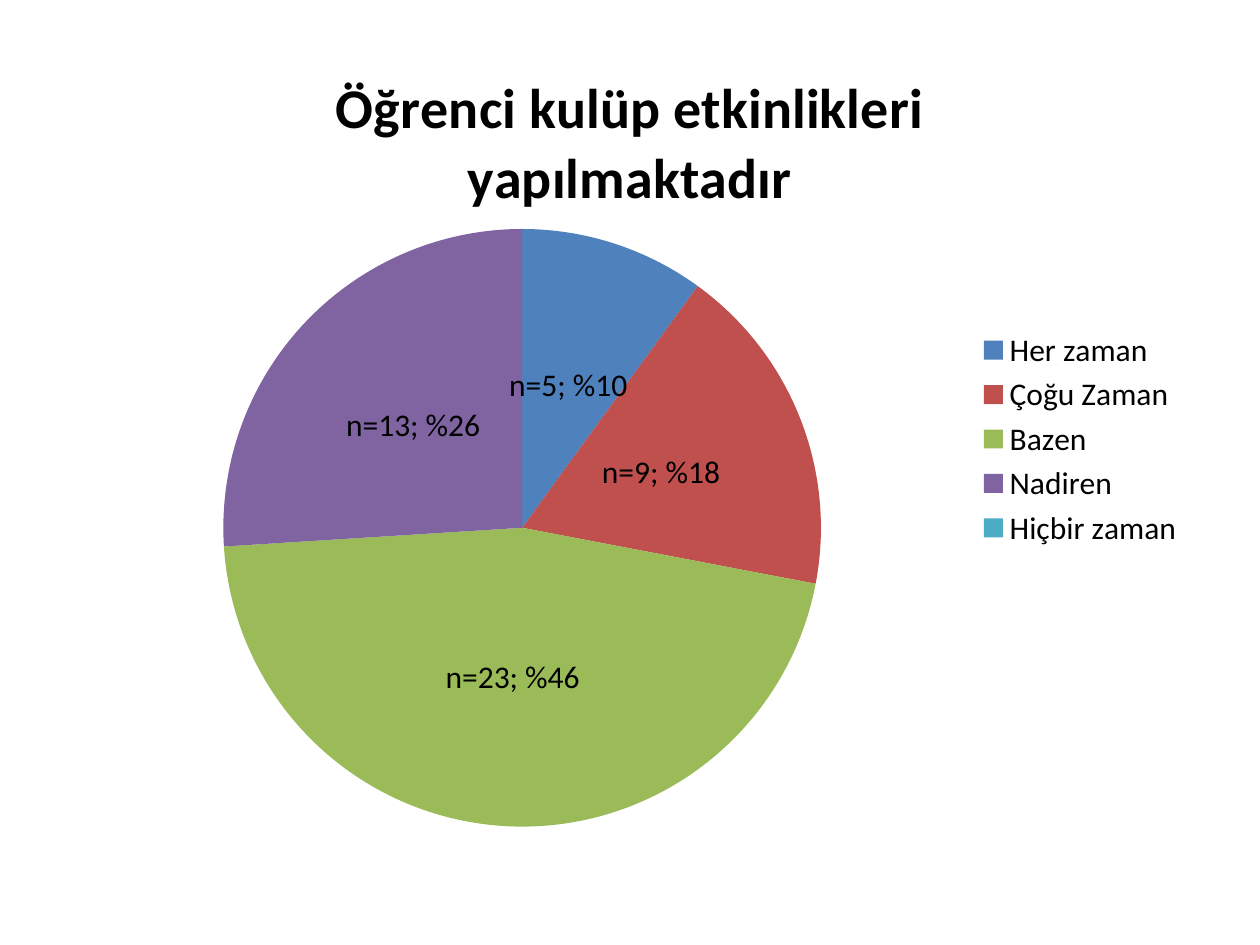
from lxml import etree
from pptx import Presentation
from pptx.chart.data import CategoryChartData
from pptx.dml.color import RGBColor
from pptx.enum.chart import XL_CHART_TYPE, XL_LABEL_POSITION, XL_LEGEND_POSITION
from pptx.oxml.ns import qn
from pptx.util import Inches, Pt

TITLE = "Öğrenci kulüp etkinlikleri yapılmaktadır"
ANSWERS = [  # answer, count, label, colour
    ("Her zaman", 5, "n=5; %10", "4F81BD"),
    ("Çoğu Zaman", 9, "n=9; %18", "C0504D"),
    ("Bazen", 23, "n=23; %46", "9BBB59"),
    ("Nadiren", 13, "n=13; %26", "8064A2"),
    ("Hiçbir zaman", None, None, "4BACC6"),
]
PIE_AREA = {"x": 0.14, "y": 0.24, "w": 0.53, "h": 0.74}  # shares of the chart


def style(font, size, bold=False):
    font.name = "Calibri"
    font.size = Pt(size)
    font.bold = bold
    font.color.rgb = RGBColor.from_string("000000")


def place_plot(chart, area):
    """Fix the inner plot area, given as shares of the chart."""
    plot_area = chart._chartSpace.chart.plotArea
    for old in plot_area.findall(qn("c:layout")):
        plot_area.remove(old)
    layout = etree.Element(qn("c:layout"))
    manual = etree.SubElement(layout, qn("c:manualLayout"))
    settings = {"layoutTarget": "inner", "xMode": "edge", "yMode": "edge", **area}
    for name, value in settings.items():
        etree.SubElement(manual, qn(f"c:{name}")).set("val", str(value))
    plot_area.insert(0, layout)


deck = Presentation()
deck.slide_width, deck.slide_height = Inches(10), Inches(7.5)
page = deck.slides.add_slide(deck.slide_layouts[6])

data = CategoryChartData()
data.categories = [answer[0] for answer in ANSWERS]
data.add_series(TITLE, [answer[1] for answer in ANSWERS])
chart = page.shapes.add_chart(
    XL_CHART_TYPE.PIE, Inches(0.5), Inches(0.28), Inches(9), Inches(6.41), data
).chart
style(chart.font, 18)
place_plot(chart, PIE_AREA)

chart.has_title = True
title = chart.chart_title
title.include_in_layout = False
title.text_frame.text = TITLE
style(title.text_frame.paragraphs[0].runs[0].font, 32, bold=True)

chart.has_legend = True
chart.legend.position = XL_LEGEND_POSITION.RIGHT
chart.legend.include_in_layout = False
style(chart.legend.font, 18)

plot = chart.plots[0]
plot.vary_by_categories = True
series = plot.series[0]
labels = series.data_labels
labels.show_value = labels.show_percentage = True
labels.position = XL_LABEL_POSITION.CENTER
style(labels.font, 18)

for index, (_, _, label, colour) in enumerate(ANSWERS):
    point = series.points[index]
    point.format.fill.solid()
    point.format.fill.fore_color.rgb = RGBColor.from_string(colour)
    if label:
        frame = point.data_label.text_frame
        frame.text = label
        style(frame.paragraphs[0].runs[0].font, 18)
        point.data_label.position = XL_LABEL_POSITION.CENTER

deck.save("out.pptx")
